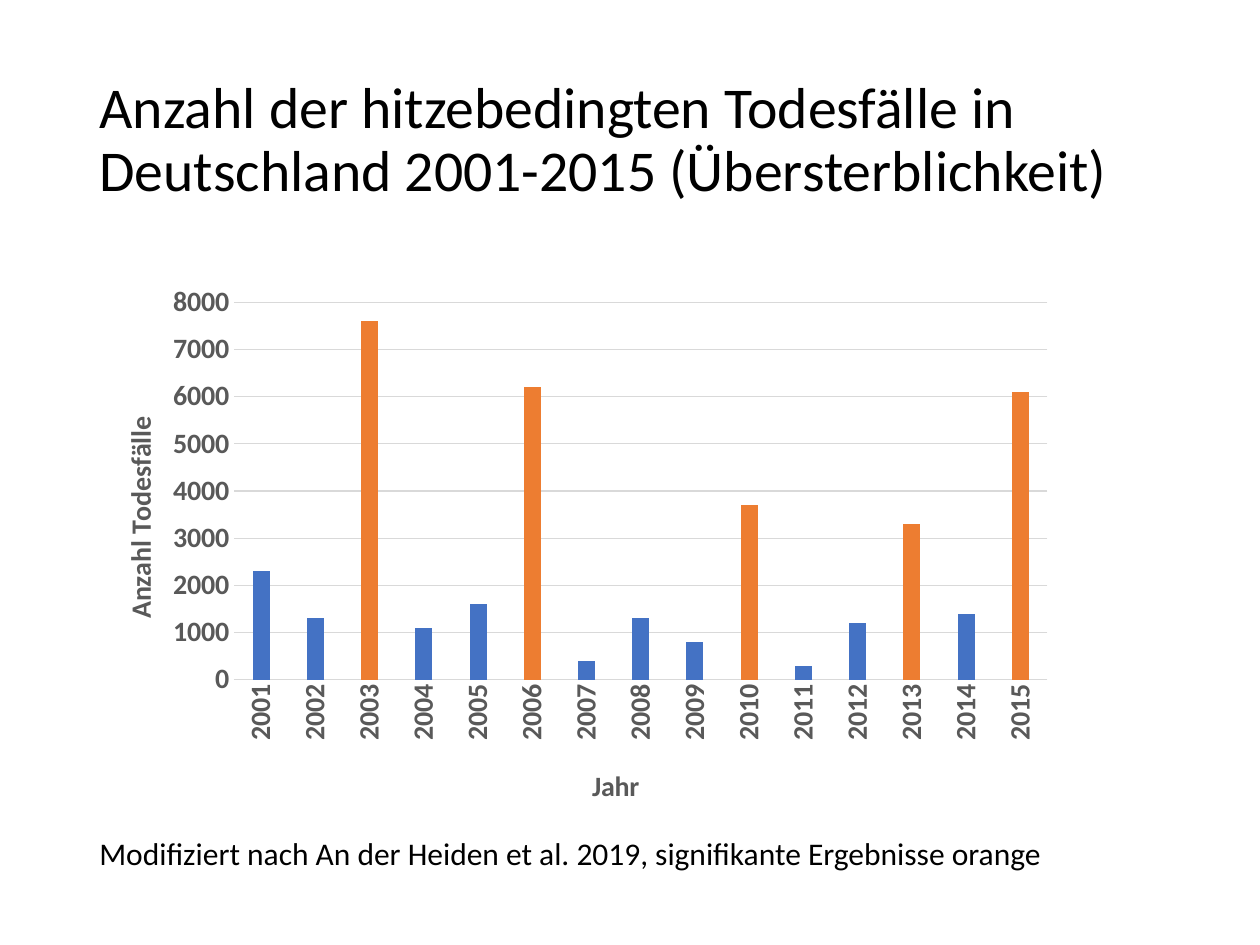
import pptx
import pptx.chart.data
import pptx.dml.color
import pptx.enum.chart
import pptx.enum.text
import pptx.oxml
import pptx.oxml.ns
import pptx.util
from dataclasses import dataclass

WIDTH, HEIGHT = 10, 7.5
DEATHS = {
    2001: 2300, 2002: 1300, 2003: 7600, 2004: 1100, 2005: 1600,
    2006: 6200, 2007: 400, 2008: 1300, 2009: 800, 2010: 3700,
    2011: 300, 2012: 1200, 2013: 3300, 2014: 1400, 2015: 6100,
}
SIGNIFICANT_YEARS = (2003, 2006, 2010, 2013, 2015)
LEFT = 0.069  # common left edge, share of the slide width
UPRIGHT = "-5400000"  # quarter turn in 60000ths of a degree


@dataclass(frozen=True)
class Theme:
    font: str = "Calibri"
    text: str = "000000"
    label: str = "595959"
    grid: str = "D9D9D9"
    bar: str = "4472C4"
    highlight: str = "ED7D31"
    title_size: int = 33
    note_size: int = 18
    axis_size: int = 16


THEME = Theme()


def rgb(code):
    return pptx.dml.color.RGBColor.from_string(code)


def apply(target, formats):
    for name, value in formats.items():
        setattr(target, name, value)


def style_font(font, size, color, bold=False):
    apply(font, {"name": THEME.font, "size": pptx.util.Pt(size), "bold": bold})
    font.color.rgb = rgb(color)


def place(left, top, width, height):
    """Turn shares of the slide into lengths."""
    return (pptx.util.Inches(left * WIDTH), pptx.util.Inches(top * HEIGHT),
            pptx.util.Inches(width * WIDTH), pptx.util.Inches(height * HEIGHT))


def add_text(page, area, text, size, frame_formats, para_formats):
    frame = page.shapes.add_textbox(*place(*area)).text_frame
    apply(frame, {"word_wrap": True, **frame_formats})
    para = frame.paragraphs[0]
    apply(para, para_formats)
    span = para.add_run()
    span.text = text
    style_font(span.font, size, THEME.text)


def set_layout(element, index, **shares):
    """Fix a chart part at shares of the chart's size."""
    for old in element.findall(pptx.oxml.ns.qn("c:layout")):
        element.remove(old)
    target = '<c:layoutTarget val="inner"/>' if "w" in shares else ""
    modes = "".join(f'<c:{key}Mode val="edge"/>' for key in "xy")
    sizes = "".join(f'<c:{key} val="{value}"/>' for key, value in shares.items())
    element.insert(index, pptx.oxml.parse_xml(
        f'<c:layout {pptx.oxml.ns.nsdecls("c")}><c:manualLayout>'
        f"{target}{modes}{sizes}</c:manualLayout></c:layout>"))


def style_axis(axis, title, x, y):
    marks = pptx.enum.chart.XL_TICK_MARK.NONE
    apply(axis, {"major_tick_mark": marks, "minor_tick_mark": marks})
    style_font(axis.tick_labels.font, THEME.axis_size, THEME.label, True)
    frame = axis.axis_title.text_frame
    span = frame.paragraphs[0].add_run()
    span.text = title
    style_font(span.font, THEME.axis_size, THEME.label, True)
    set_layout(axis.axis_title._element, 1, x=x, y=y)
    return frame


def style_line(line):
    line.color.rgb = rgb(THEME.grid)
    line.width = pptx.util.Pt(0.75)


def add_deaths_chart(page, area):
    data = pptx.chart.data.CategoryChartData()
    data.categories = [str(year) for year in DEATHS]
    data.add_series("Series 1", DEATHS.values())
    chart = page.shapes.add_chart(
        pptx.enum.chart.XL_CHART_TYPE.COLUMN_CLUSTERED, *place(*area), data).chart
    apply(chart, {"has_legend": False, "has_title": False})
    style_font(chart.font, 13, THEME.text, True)
    set_layout(chart._chartSpace.chart.plotArea, 0, x=0.15, y=0.05, w=0.83, h=0.69)

    # Bars: significant years stand out
    plot = chart.plots[0]
    apply(plot, {"gap_width": 219, "vary_by_categories": False})
    series = plot.series[0]
    series.format.fill.solid()
    series.format.fill.fore_color.rgb = rgb(THEME.bar)
    for index, year in enumerate(DEATHS):
        if year in SIGNIFICANT_YEARS:
            fill = series.points[index].format.fill
            fill.solid()
            fill.fore_color.rgb = rgb(THEME.highlight)

    # Year axis with upright labels
    years = chart.category_axis
    style_axis(years, "Jahr", 0.51, 0.89)
    style_line(years.format.line)
    years._element.txPr.bodyPr.set("rot", UPRIGHT)

    # Value axis with upright title
    values = chart.value_axis
    apply(values, {"minimum_scale": 0, "maximum_scale": 8000, "major_unit": 1000})
    frame = style_axis(values, "Anzahl Todesfälle", 0.03, 0.25)
    frame._txBody.bodyPr.set("rot", UPRIGHT)
    frame._txBody.bodyPr.set("vert", "horz")
    values.format.line.fill.background()
    style_line(values.major_gridlines.format.line)


def main():
    deck = pptx.Presentation()
    apply(deck, {"slide_width": pptx.util.Inches(WIDTH),
                 "slide_height": pptx.util.Inches(HEIGHT)})
    page = deck.slides.add_slide(deck.slide_layouts[6])

    # Title
    add_text(page, (LEFT, 0.053, 0.862, 0.193),
             "Anzahl der hitzebedingten Todesfälle in Deutschland 2001-2015 "
             "(Übersterblichkeit)", THEME.title_size,
             {"vertical_anchor": pptx.enum.text.MSO_ANCHOR.MIDDLE},
             {"line_spacing": 0.9})

    # Chart
    add_deaths_chart(page, (LEFT, 0.291, 0.778, 0.579))

    # Source note
    add_text(page, (LEFT, 0.876, 0.906, 0.053),
             "Modifiziert nach An der Heiden et al. 2019, "
             "signifikante Ergebnisse orange", THEME.note_size,
             {"auto_size": pptx.enum.text.MSO_AUTO_SIZE.SHAPE_TO_FIT_TEXT}, {})

    deck.save("out.pptx")


if __name__ == "__main__":
    main()
